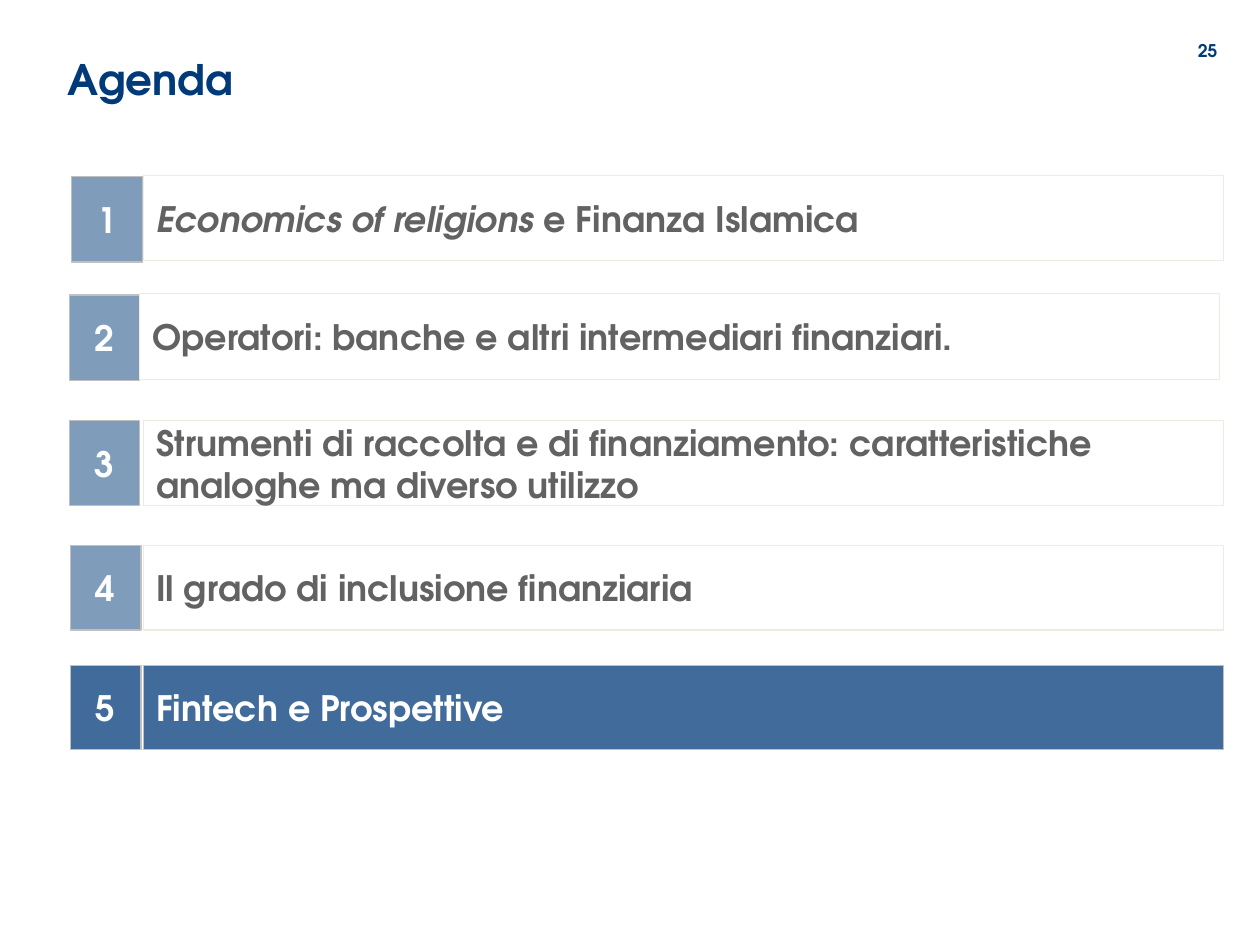
from dataclasses import dataclass

from lxml.etree import SubElement
from pptx import Presentation
from pptx.dml.color import RGBColor
from pptx.enum.shapes import MSO_SHAPE
from pptx.enum.text import MSO_ANCHOR, PP_ALIGN
from pptx.oxml.ns import qn
from pptx.util import Inches, Pt

COLUMNS, ROWS = 100, 75


@dataclass(frozen=True)
class Theme:
    font: str = "TeX Gyre Adventor"
    navy: str = "003A79"
    gray: str = "626262"
    white: str = "FFFFFF"
    badge_line: str = "C0C0C0"
    label_line: str = "EEECE1"
    title_size: int = 24
    item_size: int = 20
    number_size: int = 10
    line_width: float = 0.75
    muted_opacity: int = 50
    active_opacity: int = 75


@dataclass(frozen=True)
class Run:
    text: str
    italic: bool = False


@dataclass(frozen=True)
class Box:
    column: float
    row: float
    width: float
    height: float


@dataclass(frozen=True)
class AgendaItem:
    runs: tuple[Run, ...]
    badge_column: float
    badge_row: float
    height: float = 6.7
    label_column: float = 11.4
    label_rise: float = 0
    active: bool = False


THEME = Theme()
BADGE_WIDTH, LABEL_WIDTH = 5.6, 85.7
TITLE_BOX = Box(4.4, 4, 85.7, 5)
NUMBER_BOX = Box(93.6, 2, 4.5, 4)
AGENDA = (
    AgendaItem((Run("Economics of religions ", True), Run("e Finanza Islamica")),
               5.7, 14, height=6.8, label_rise=0.1),
    AgendaItem((Run("Operatori: banche e altri intermediari finanziari."),),
               5.5, 23.4, height=6.8, label_column=11.1, label_rise=0.1),
    AgendaItem((Run("Strumenti di raccolta e di finanziamento: caratteristiche "
                    "analoghe ma diverso utilizzo"),), 5.5, 33.4),
    AgendaItem((Run("Il grado di inclusione finanziaria"),), 5.6, 43.3),
    AgendaItem((Run("Fintech e Prospettive"),), 5.6, 52.8, active=True),
)


def place(presentation, box: Box) -> tuple[int, int, int, int]:
    column = presentation.slide_width / COLUMNS
    row = presentation.slide_height / ROWS
    return (round(box.column * column), round(box.row * row),
            round(box.width * column), round(box.height * row))


def write(shape, runs: tuple[Run, ...], size: int, color: str,
          alignment=PP_ALIGN.LEFT, line_spacing: float = 1.0) -> None:
    frame_format = {"word_wrap": True, "vertical_anchor": MSO_ANCHOR.MIDDLE}
    for name, value in frame_format.items():
        setattr(shape.text_frame, name, value)
    paragraph = shape.text_frame.paragraphs[0]
    paragraph.alignment = alignment
    paragraph.line_spacing = line_spacing
    for item in runs:
        run = paragraph.add_run()
        run.text = item.text
        font_format = {"name": THEME.font, "size": Pt(size),
                       "bold": True, "italic": item.italic}
        for name, value in font_format.items():
            setattr(run.font, name, value)
        run.font.color.rgb = RGBColor.from_string(color)


def add_text(presentation, slide, box: Box, text: str, size: int, **layout) -> None:
    shape = slide.shapes.add_textbox(*place(presentation, box))
    write(shape, (Run(text),), size, THEME.navy, **layout)


def add_panel(presentation, slide, box: Box, fill: str, line: str, opacity: int = 100):
    shape = slide.shapes.add_shape(MSO_SHAPE.RECTANGLE, *place(presentation, box))
    shape.shadow.inherit = False
    shape.fill.solid()
    shape.fill.fore_color.rgb = RGBColor.from_string(fill)
    shape.line.color.rgb = RGBColor.from_string(line)
    shape.line.width = Pt(THEME.line_width)
    if opacity < 100:
        color = shape._element.spPr.find(qn("a:solidFill")).find(qn("a:srgbClr"))
        SubElement(color, qn("a:alpha")).set("val", str(opacity * 1000))
    return shape


def add_item(presentation, slide, number: int, item: AgendaItem) -> None:
    opacity = THEME.active_opacity if item.active else THEME.muted_opacity
    badge_box = Box(item.badge_column, item.badge_row, BADGE_WIDTH, item.height)
    badge = add_panel(presentation, slide, badge_box, THEME.navy,
                      THEME.badge_line, opacity)
    write(badge, (Run(str(number)),), THEME.item_size, THEME.white, PP_ALIGN.CENTER)

    label_box = Box(item.label_column, item.badge_row - item.label_rise,
                    LABEL_WIDTH, item.height)
    if item.active:
        label = add_panel(presentation, slide, label_box, THEME.navy,
                          THEME.badge_line, opacity)
    else:
        label = add_panel(presentation, slide, label_box, THEME.white, THEME.label_line)
    write(label, item.runs, THEME.item_size, THEME.white if item.active else THEME.gray)


def main() -> None:
    presentation = Presentation()
    presentation.slide_width = Inches(10)
    presentation.slide_height = Inches(7.5)
    slide = presentation.slides.add_slide(presentation.slide_layouts[6])
    add_text(presentation, slide, TITLE_BOX, "Agenda", THEME.title_size, line_spacing=0.9)
    add_text(presentation, slide, NUMBER_BOX, "25", THEME.number_size,
             alignment=PP_ALIGN.CENTER)
    for number, item in enumerate(AGENDA, start=1):
        add_item(presentation, slide, number, item)
    presentation.save("out.pptx")


if __name__ == "__main__":
    main()
